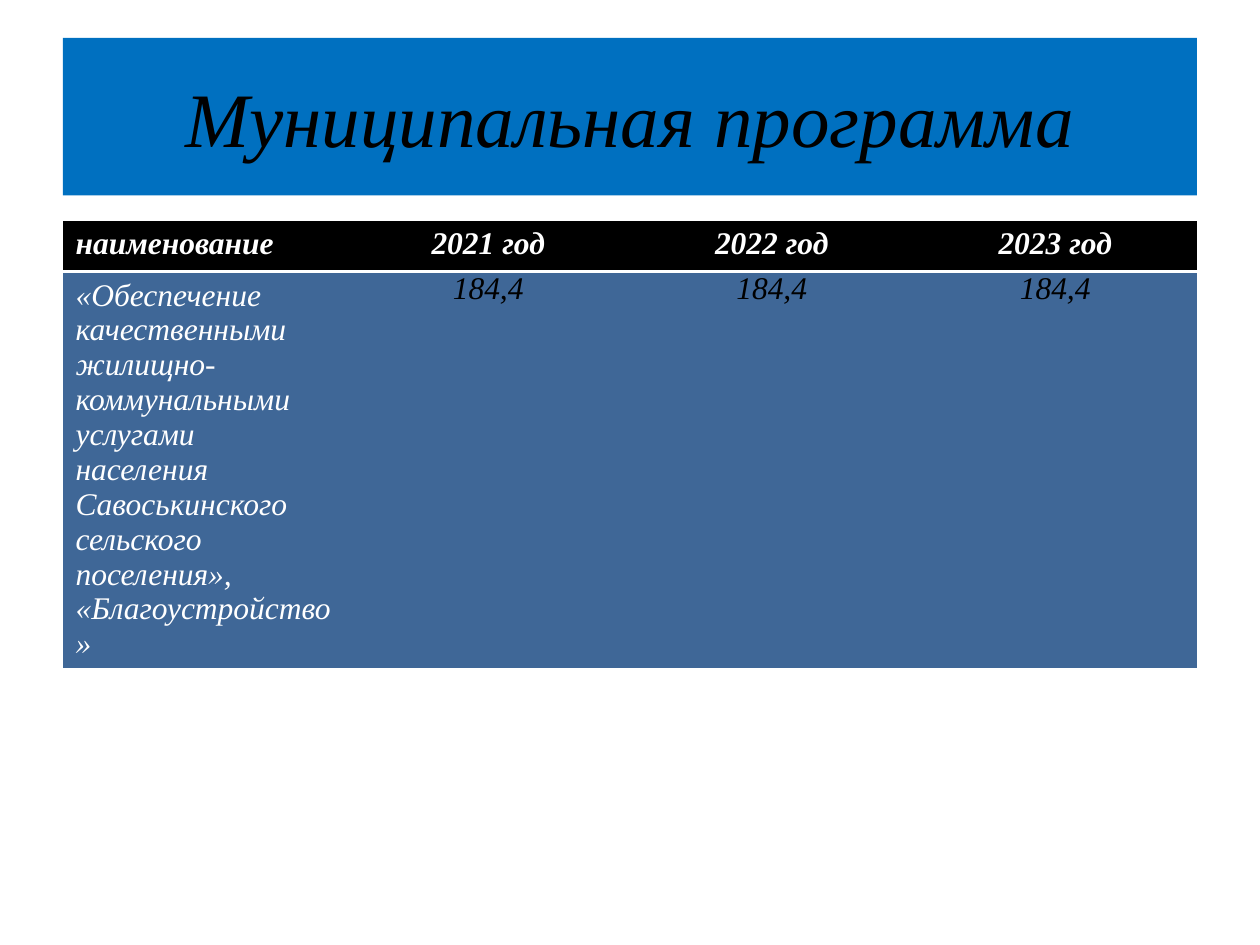
from lxml import etree
from pptx import Presentation
from pptx.dml.color import RGBColor
from pptx.enum import shapes, text
from pptx.oxml import ns
from pptx.util import Pt

FONT = "Times New Roman"
BLACK = RGBColor(0x00, 0x00, 0x00)
WHITE = RGBColor(0xFF, 0xFF, 0xFF)
BLUE = RGBColor(0x00, 0x70, 0xC0)
STEEL = RGBColor(0x3F, 0x67, 0x97)
NO_GRID_STYLE = "{2D5ABB26-0587-4C30-8999-92F81FD0307C}"

LEFT, WIDTH = 36, 648
HEADER = ["наименование", "2021 год", "2022 год", "2023 год"]
PROGRAMME = [
    "«Обеспечение качественными жилищно-коммунальными услугами населения "
    "Савоськинского сельского поселения», «Благоустройство»",
    "184,4", "184,4", "184,4",
]


def add_text(tf, words, size, color, align, bold=False):
    """Write one italic run into the first paragraph of a text frame."""
    p = tf.paragraphs[0]
    p.alignment = align
    r = p.add_run()
    r.text = words
    r.font.name = FONT
    r.font.size = Pt(size)
    r.font.italic = True
    r.font.bold = bold
    r.font.color.rgb = color


def add_title(s, words):
    """Add the blue title band."""
    sp = s.shapes.add_shape(shapes.MSO_SHAPE.RECTANGLE,
                            Pt(LEFT), Pt(21.6), Pt(WIDTH), Pt(90))
    sp.shadow.inherit = False
    sp.fill.solid()
    sp.fill.fore_color.rgb = BLUE
    sp.line.fill.background()
    tf = sp.text_frame
    tf.word_wrap = True
    tf.vertical_anchor = text.MSO_ANCHOR.MIDDLE
    add_text(tf, words, 44, BLACK, text.PP_ALIGN.CENTER)


def set_border(cell, edge, color, width):
    """Draw a solid line on one edge of a cell."""
    ln = etree.Element(ns.qn(f"a:{edge}"), w=str(Pt(width)))
    fill = etree.SubElement(ln, ns.qn("a:solidFill"))
    etree.SubElement(fill, ns.qn("a:srgbClr"), val=str(color))
    cell._tc.get_or_add_tcPr().insert(0, ln)


def add_programme_table(s):
    """Add the programme table with its yearly amounts."""
    heights = [29.2, 226]
    table = s.shapes.add_table(2, len(HEADER), Pt(LEFT), Pt(126),
                               Pt(WIDTH), Pt(sum(heights))).table
    table.horz_banding = False
    table._tbl.tblPr.find(ns.qn("a:tableStyleId")).text = NO_GRID_STYLE
    for row, height in zip(table.rows, heights):
        row.height = Pt(height)
    for i, words in enumerate([HEADER, PROGRAMME]):
        is_header = i == 0
        for j, word in enumerate(words):
            cell = table.cell(i, j)
            is_amount = not is_header and j > 0
            cell.fill.solid()
            cell.fill.fore_color.rgb = BLACK if is_header else STEEL
            if is_amount:
                cell.margin_left = cell.margin_right = Pt(5)
                cell.margin_top = cell.margin_bottom = Pt(0)
            align = text.PP_ALIGN.CENTER if j else text.PP_ALIGN.LEFT
            add_text(cell.text_frame, word, 18,
                     BLACK if is_amount else WHITE, align, is_header)
            set_border(cell, "lnB" if is_header else "lnT", WHITE, 2)


def main():
    """Build the slide and save it."""
    prs = Presentation()
    prs.slide_width, prs.slide_height = Pt(720), Pt(540)
    s = prs.slides.add_slide(prs.slide_layouts[6])
    add_title(s, "Муниципальная программа")
    add_programme_table(s)
    prs.save("out.pptx")


if __name__ == "__main__":
    main()
